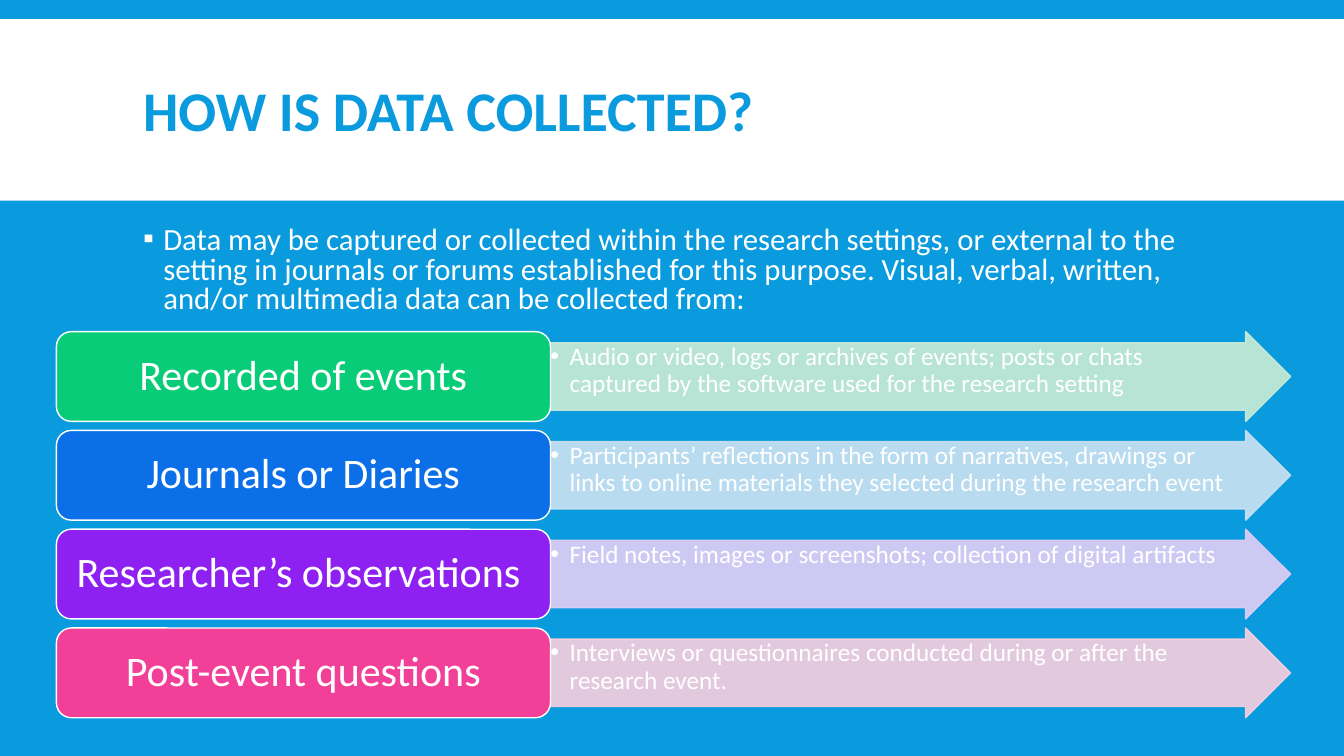
from lxml import etree
from pptx import Presentation
from pptx import util as u
from pptx.dml.color import RGBColor
from pptx.enum import shapes, text
from pptx.oxml.ns import qn

BLUE = "099BDD"
WHITE = "FFFFFF"
TOP, PITCH, ROW_HEIGHT = 3.29, 0.98, 0.89
SOURCES = [
    ("Recorded of events", "08CC78", "CCECD6",
     "Audio or video, logs or archives of events; posts or chats captured "
     "by the software used for the research setting"),
    ("Journals or Diaries", "0B6FE8", "CDE2F1",
     "Participants’ reflections in the form of narratives, drawings or links "
     "to online materials they selected during the research event"),
    ("Researcher’s observations ", "8E21F2", "E3CEF6",
     "Field notes, images or screenshots; collection of digital artifacts"),
    ("Post-event questions", "F24099", "FACFDF",
     "Interviews or questionnaires conducted during or after the research event."),
]


def paint(target, color, alpha=None):
    target.solid()
    target.fore_color.rgb = RGBColor.from_string(color)
    if alpha is not None:
        clr = target._xPr.find(".//" + qn("a:srgbClr"))
        etree.SubElement(clr, qn("a:alpha"), val=str(alpha * 1000))


def add_bullet(p, char, indent):
    pPr = p._p.get_or_add_pPr()
    pPr.set("marL", str(u.Inches(indent)))
    pPr.set("indent", str(-u.Inches(indent)))
    clr = etree.SubElement(pPr, qn("a:buClr"))
    etree.SubElement(clr, qn("a:srgbClr"), val=WHITE)
    etree.SubElement(pPr, qn("a:buFont"), typeface="Arial")
    etree.SubElement(pPr, qn("a:buChar"), char=char)


def write(sp, words, size, spacing, color=WHITE, bold=False, bullet=None,
          align=text.PP_ALIGN.LEFT, anchor=text.MSO_ANCHOR.TOP, insets=None):
    tf = sp.text_frame
    frame = {"word_wrap": True, "auto_size": text.MSO_AUTO_SIZE.NONE,
             "vertical_anchor": anchor}
    for name, value in frame.items():
        setattr(tf, name, value)
    for side, value in zip(("left", "top", "right", "bottom"), insets or ()):
        setattr(tf, "margin_" + side, u.Inches(value))
    p = tf.paragraphs[0]
    if bullet:
        add_bullet(p, *bullet)
    layout = {"alignment": align, "line_spacing": spacing, "space_before": u.Pt(0)}
    for name, value in layout.items():
        setattr(p, name, value)
    r = p.add_run()
    r.text = words
    for name, value in {"name": "Calibri", "size": u.Pt(size), "bold": bold}.items():
        setattr(r.font, name, value)
    r.font.color.rgb = RGBColor.from_string(color)


def place(sp, *box):
    for name, value in zip(("left", "top", "width", "height"), box):
        setattr(sp, name, u.Inches(value))


def add_block(s, kind, box, fill, line=None, alpha=None):
    sp = s.shapes.add_shape(kind, *map(u.Inches, box))
    sp.shadow.inherit = False
    paint(sp.fill, fill, alpha)
    if line:
        paint(sp.line.fill, line, alpha)
        sp.line.width = u.Pt(1)
    else:
        sp.line.fill.background()
    return sp


def add_source(s, top, label, color, tint, detail):
    arrow = add_block(s, shapes.MSO_SHAPE.RIGHT_ARROW,
                      (5.45, top, 7.35, ROW_HEIGHT), tint, tint, 90)
    arrow.adjustments[0] = 0.75
    arrow.adjustments[1] = 0.5
    write(arrow, detail, 18, 0.9, bullet=("•", 0.19), insets=(0.01, 0.01, 0.24, 0.01))
    box = add_block(s, shapes.MSO_SHAPE.ROUNDED_RECTANGLE,
                    (0.56, top, 4.9, ROW_HEIGHT), color, WHITE)
    write(box, label, 30, 0.9, align=text.PP_ALIGN.CENTER,
          anchor=text.MSO_ANCHOR.MIDDLE, insets=(0.12, 0.06, 0.12, 0.06))


def main():
    prs = Presentation()
    prs.slide_width, prs.slide_height = u.Inches(13.33), u.Inches(7.5)
    s = prs.slides.add_slide(prs.slide_layouts[1])
    paint(s.background.fill, BLUE)
    band = add_block(s, shapes.MSO_SHAPE.RECTANGLE, (0, 0.19, 13.33, 1.8), WHITE)
    s.shapes._spTree.insert(2, band._element)

    title, body = s.placeholders
    place(title, 1.32, 0.31, 10.7, 1.65)
    write(title, "HOW IS DATA COLLECTED?", 40, 0.85, BLUE, True,
          anchor=text.MSO_ANCHOR.MIDDLE)
    place(body, 1.32, 2.2, 10.7, 1.09)
    write(body, "Data may be captured or collected within the research settings, "
          "or external to the setting in journals or forums established for this "
          "purpose. Visual, verbal, written, and/or multimedia data can be "
          "collected from:", 22, 0.8, bullet=("▪", 0.2))

    for i, source in enumerate(SOURCES):
        add_source(s, TOP + i * PITCH, *source)
    prs.save("out.pptx")


if __name__ == "__main__":
    main()
